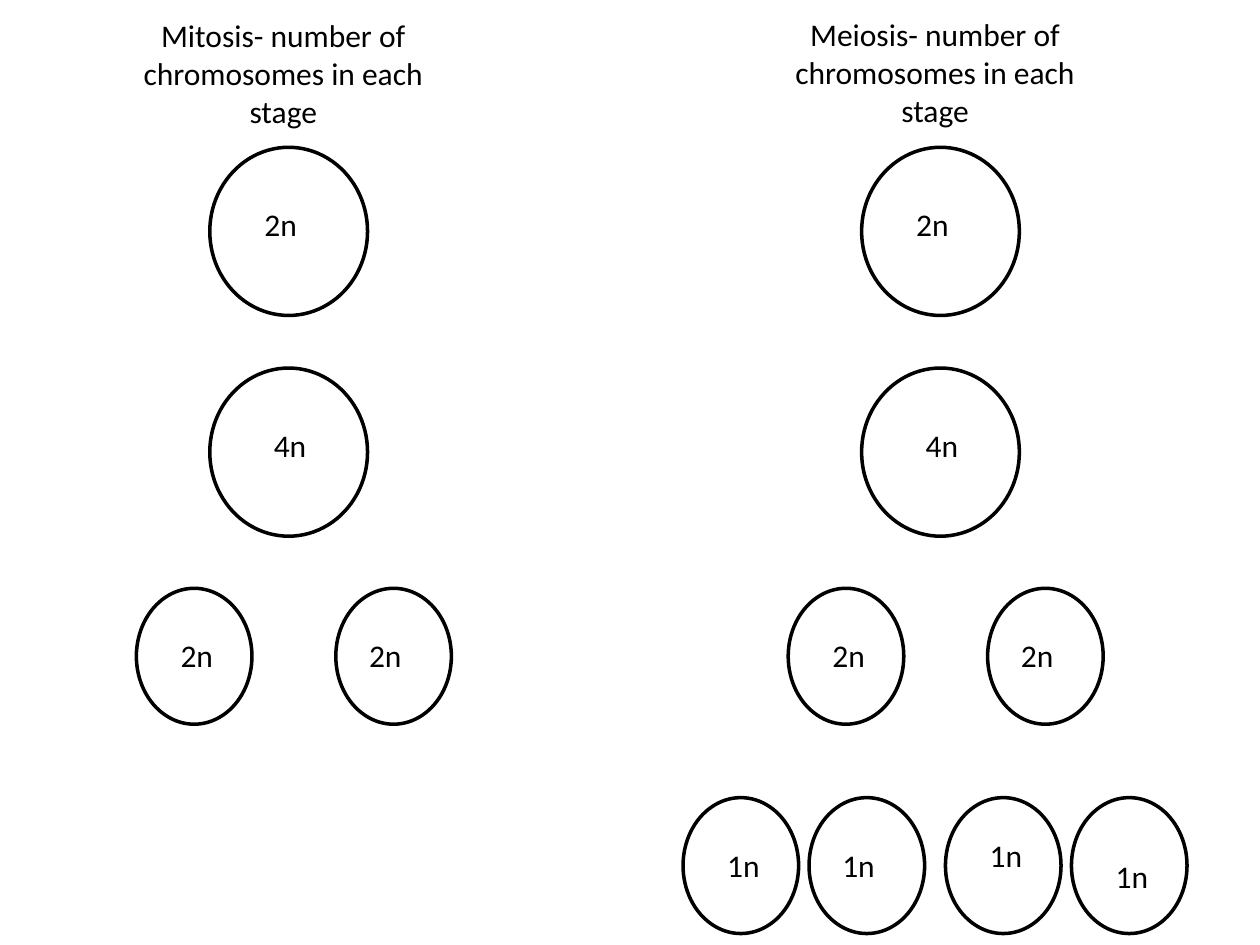
"""Build a slide comparing chromosome numbers in mitosis and meiosis."""
from pptx import Presentation, util as u
from pptx.dml.color import RGBColor
from pptx.enum import shapes, text

INK = "000000"
BIG, SMALL = (3.18, 3.39), (2.33, 2.74)
# Each cell: label, left within its column, label offset within the cell.
STAGES = [
    (2.97, BIG, [("2n", 2.33, 0.85, 1.04)]),
    (7.42, BIG, [("4n", 2.33, 1.04, 1.04)]),
    (11.86, SMALL, [("2n", 0.85, 0.64, 0.84), ("2n", 4.87, 0.42, 0.84)]),
    (16.08, SMALL, [("1n", -1.27, 0.64, 0.86), ("1n", 1.27, 0.42, 0.86),
                    ("1n", 4.02, 0.64, 0.64), ("1n", 6.56, 0.64, 1.07)]),
]
COLUMNS = [
    (1, "Mitosis- number of chromosomes in each stage", 1.9, 0.2, STAGES[:3]),
    (3, "Meiosis- number of chromosomes in each stage", 15.04, 0.18, STAGES),
]


def color(code):
    return RGBColor.from_string(code)


def write(frame, words, align, wrap):
    frame.word_wrap = wrap
    frame.vertical_anchor = text.MSO_ANCHOR.TOP
    frame.auto_size = text.MSO_AUTO_SIZE.SHAPE_TO_FIT_TEXT
    par = frame.paragraphs[0]
    par.text, par.alignment, par.space_before = words, align, u.Pt(0)
    par.font.name, par.font.size, par.font.bold = "Calibri", u.Pt(18), False
    par.font.color.rgb = color(INK)


def place(shape, *box):
    shape.left, shape.top, shape.width, shape.height = map(u.Cm, box)


def draw(slide, left, top, size):
    cell = slide.shapes.add_shape(
        shapes.MSO_SHAPE.OVAL, *map(u.Cm, (left, top, *size)))
    cell.shadow.inherit = False
    cell.fill.background()
    cell.line.color.rgb = color(INK)
    cell.line.width = u.Pt(2)


def main():
    deck = Presentation()
    deck.slide_width, deck.slide_height = u.Cm(25.4), u.Cm(19.05)
    slide = deck.slides.add_slide(deck.slide_layouts[4])
    heads = {h.placeholder_format.idx: h for h in slide.placeholders}
    for idx, title, left, top, stages in COLUMNS:
        head = heads.pop(idx)
        place(head, left, top, 7.62, 2.57)
        write(head.text_frame, title, text.PP_ALIGN.CENTER, True)
        for row, size, cells in stages:
            for words, shift, dx, dy in cells:
                edge = left + shift
                draw(slide, edge, row, size)
                label = slide.shapes.add_textbox(
                    *map(u.Cm, (edge + dx, row + dy, 1.17, 1.02)))
                write(label.text_frame, words, text.PP_ALIGN.LEFT, False)
    for spare in heads.values():
        spare.element.getparent().remove(spare.element)
    deck.save("out.pptx")


if __name__ == "__main__":
    main()
